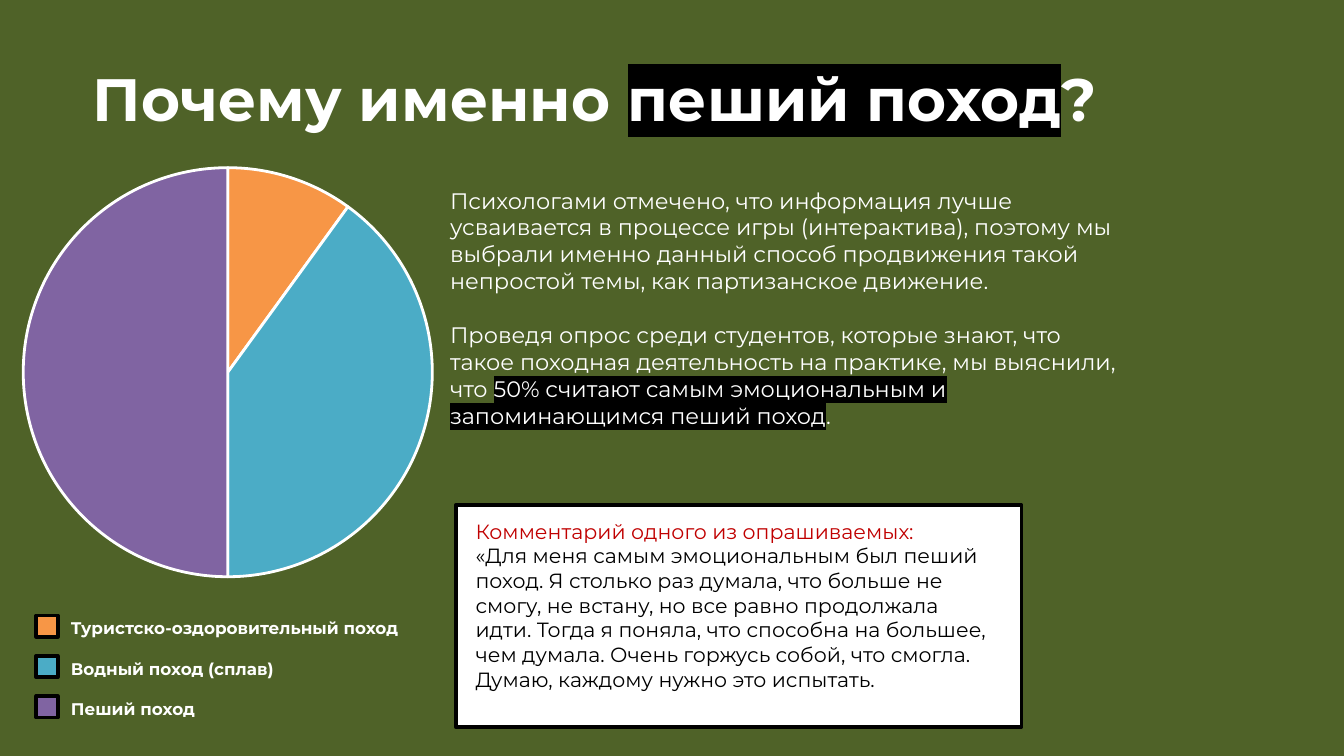
"""Build a slide on why hiking was chosen, with a survey pie chart and a quote."""
from lxml.etree import SubElement
from pptx import Presentation
from pptx.chart.data import CategoryChartData
from pptx.dml.color import RGBColor
from pptx.enum.chart import XL_CHART_TYPE as ChartType
from pptx.enum.shapes import MSO_SHAPE as ShapeKind
from pptx.enum.text import MSO_ANCHOR as Anchor, MSO_AUTO_SIZE as AutoSize, PP_ALIGN as Align
from pptx.oxml.ns import qn
from pptx.util import Inches, Pt

COLORS = {
    "background": "4F6228", "white": "FFFFFF", "black": "000000", "red": "C00000",
    "orange": "F79646", "blue": "4BACC6", "purple": "8064A2",
}

TITLE = [[("Почему именно ", "white", False), ("пеший поход", "white", True), ("?", "white", False)]]
BODY = [
    [("Психологами отмечено, что информация лучше усваивается в процессе игры (интерактива), "
      "поэтому мы выбрали именно данный способ продвижения такой непростой темы, "
      "как партизанское движение.", "white", False)],
    [("Проведя опрос среди студентов, которые знают, что такое походная деятельность "
      "на практике, мы выяснили, что ", "white", False),
     ("50% считают самым эмоциональным и запоминающимся пеший поход", "white", True),
     (".", "white", False)],
]
COMMENT = [
    [("Комментарий одного из опрашиваемых:", "red", False)],
    [("«Для меня самым эмоциональным был пеший поход. Я столько раз думала, что больше не "
      "смогу, не встану, но все равно продолжала идти. Тогда я поняла, что способна на большее, "
      "чем думала. Очень горжусь собой, что смогла. Думаю, каждому нужно это испытать.",
      "black", False)],
]
SURVEY = [
    ("Туристско-оздоровительный поход", 10, "orange"),
    ("Водный поход (сплав)", 40, "blue"),
    ("Пеший поход", 50, "purple"),
]
LEGEND = [[(name, "white", False)] for name, value, color in SURVEY]

SWATCH_LEFT, SWATCH_TOP, SWATCH_SIZE, SWATCH_STEP = 0.27, 4.58, 0.16, 0.3


def rgb(name):
    return RGBColor.from_string(COLORS[name])


def inches(*lengths):
    return [Inches(length) for length in lengths]


def set_all(target, values):
    for name, value in values.items():
        setattr(target, name, value)


def highlight(run, color):
    properties = run._r.get_or_add_rPr()
    mark = SubElement(properties, qn("a:highlight"))
    SubElement(mark, qn("a:srgbClr")).set("val", COLORS[color])
    properties.find(qn("a:latin")).addprevious(mark)


def write(shape, paragraphs, size, bold=False, gap=0):
    frame = shape.text_frame
    set_all(frame, {"word_wrap": True, "auto_size": AutoSize.NONE, "vertical_anchor": Anchor.TOP})
    for index, runs in enumerate(paragraphs):
        paragraph = frame.add_paragraph() if index else frame.paragraphs[0]
        set_all(paragraph, {"alignment": Align.LEFT, "space_before": Pt(gap if index else 0)})
        for text, color, marked in runs:
            run = paragraph.add_run()
            run.text = text
            set_all(run.font, {"size": Pt(size), "bold": bold, "name": "Montserrat"})
            run.font.color.rgb = rgb(color)
            if marked:
                highlight(run, "black")


def add_box(slide, at, color):
    shape = slide.shapes.add_shape(ShapeKind.RECTANGLE, *inches(*at))
    shape.shadow.inherit = False
    shape.fill.solid()
    shape.fill.fore_color.rgb = rgb(color)
    shape.line.color.rgb = rgb("black")
    shape.line.width = Pt(2)


def add_text(slide, at, paragraphs, size, **options):
    write(slide.shapes.add_textbox(*inches(*at)), paragraphs, size, **options)


def add_pie(slide, at):
    data = CategoryChartData()
    data.categories = [str(number) for number in range(1, len(SURVEY) + 1)]
    data.add_series("Series 1", [value for name, value, color in SURVEY])
    chart = slide.shapes.add_chart(ChartType.PIE, *inches(*at), data).chart
    set_all(chart, {"has_title": False, "has_legend": False})
    set_all(chart.font, {"size": Pt(10), "name": "Calibri"})
    chart.font.color.rgb = rgb("black")
    plot = chart.plots[0]
    plot.vary_by_categories = True
    for index, (name, value, color) in enumerate(SURVEY):
        slice_format = plot.series[0].points[index].format
        slice_format.fill.solid()
        slice_format.fill.fore_color.rgb = rgb(color)
        slice_format.line.color.rgb = rgb("white")
        slice_format.line.width = Pt(1.5)


def main():
    presentation = Presentation()
    width = Inches(10)
    set_all(presentation, {"slide_width": width, "slide_height": width * 9 // 16})
    slide = presentation.slides.add_slide(presentation.slide_layouts[5])
    slide.background.fill.solid()
    slide.background.fill.fore_color.rgb = rgb("background")

    title = slide.shapes.title
    set_all(title, dict(zip(("left", "top", "width", "height"), inches(0.59, 0.41, 7.87, 0.64))))
    write(title, TITLE, 32, bold=True)

    add_pie(slide, (0, 1.11, 3.39, 3.32))
    add_text(slide, (0.43, 4.55, 2.86, 0.86), LEGEND, 9, bold=True, gap=10.8)
    for index, (name, value, color) in enumerate(SURVEY):
        top = SWATCH_TOP + index * SWATCH_STEP
        add_box(slide, (SWATCH_LEFT, top, SWATCH_SIZE, SWATCH_SIZE), color)

    add_text(slide, (3.25, 1.34, 5.21, 2.12), BODY, 12, gap=14.6)
    add_box(slide, (3.39, 3.76, 4.21, 1.65), "white")
    add_text(slide, (3.44, 3.81, 4.08, 1.58), COMMENT, 11)
    presentation.save("out.pptx")


if __name__ == "__main__":
    main()
